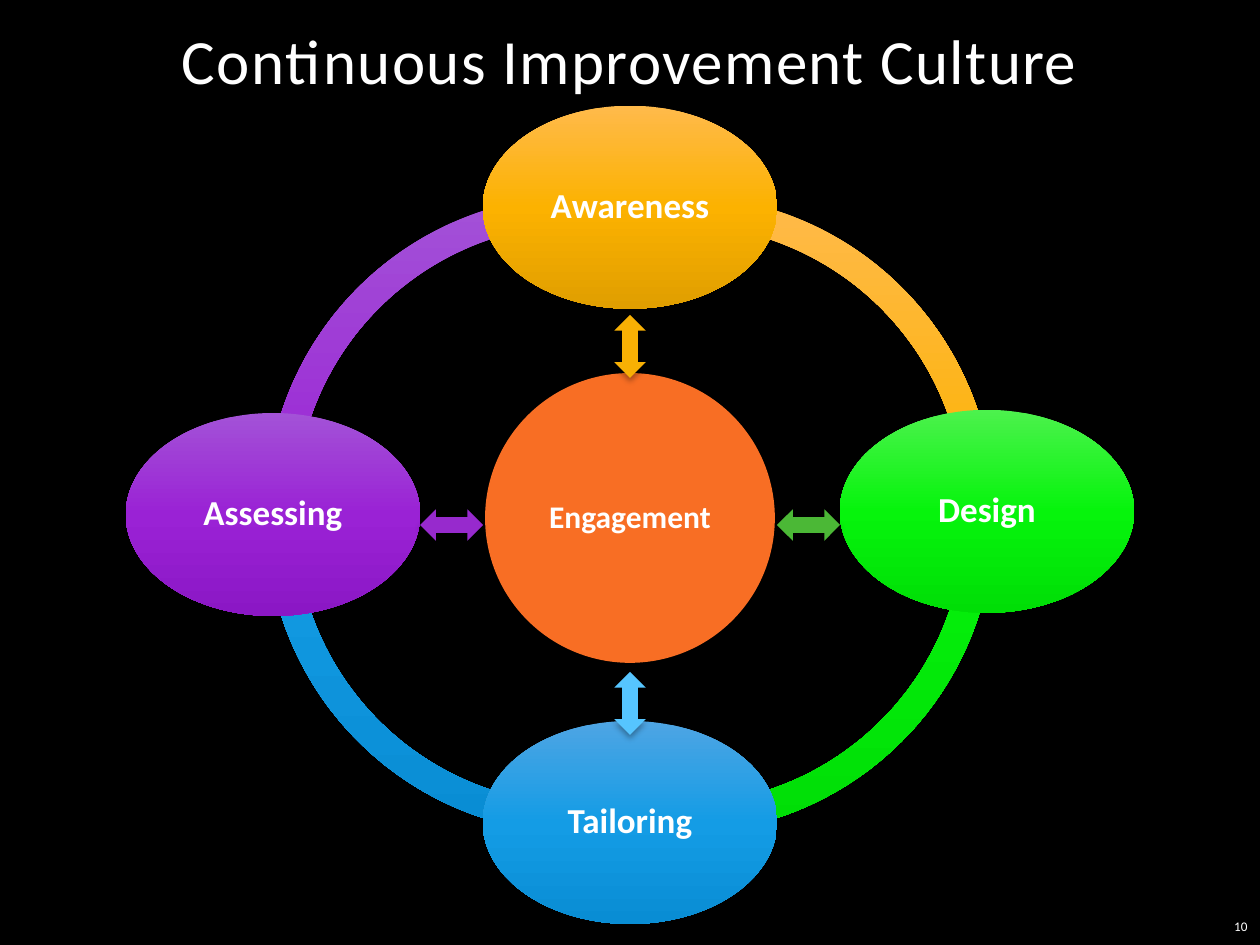
"""Build the Continuous Improvement Culture cycle slide."""
from copy import deepcopy
from dataclasses import dataclass

from lxml.etree import SubElement
from pptx import Presentation
from pptx.dml.color import RGBColor
from pptx.enum.shapes import MSO_SHAPE
from pptx.enum.text import MSO_ANCHOR, MSO_AUTO_SIZE, PP_ALIGN
from pptx.oxml.ns import qn
from pptx.util import Pt

WHITE = "FFFFFF"
PURPLE = ("A352D7", "9A22D5", "8B17C5")
BLUE = ("4EA5E4", "149CE5", "098DD4")
GREEN = ("4CF24D", "06F40C", "00DE06")
ORANGE = ("FFBA4B", "FCB200", "E09E00")
MIDDLE_X = 360
ARC_SIZE, ARC_THICKNESS = 360, 4.64 / 100
STAGE_WIDTH, STAGE_HEIGHT = 168.2, 116
HUB_SIZE, HUB_Y = 165.6, 296
ARROW_WIDTH, ARROW_LENGTH, ARROW_REACH, ARROW_Y = 18, 36, 102, 300


@dataclass(frozen=True)
class Arc:
    """A quarter of the ring, by centre and by start and end degrees."""
    x: float
    y: float
    start: float
    end: float
    shades: tuple[str, str, str]


@dataclass(frozen=True)
class Stage:
    """A named stage of the cycle, by centre."""
    name: str
    x: float
    y: float
    shades: tuple[str, str, str]


@dataclass(frozen=True)
class Arrow:
    """A two-way arrow, by direction from the hub."""
    across: int
    down: int
    color: str


ARCS = (
    Arc(332, 291.6, 179.26, 279.23, PURPLE),
    Arc(332, 296.4, 80.77, 180.74, BLUE),
    Arc(388, 296.4, 358.61, 99.3, GREEN),
    Arc(388, 291.6, 260.72, 0.11, ORANGE),
)
STAGES = (
    Stage("Awareness", MIDDLE_X, 118.4, ORANGE),
    Stage("Design", 564, 292.2, GREEN),
    Stage("Tailoring", MIDDLE_X, 470, BLUE),
    Stage("Assessing", 156, 294, PURPLE),
)
ARROWS = (
    Arrow(0, 1, "56C5FF"),
    Arrow(0, -1, "F8B004"),
    Arrow(1, 0, "4BB836"),
    Arrow(-1, 0, "972ACD"),
)


def rgb(color: str) -> RGBColor:
    """Turn a hex string into a colour."""
    return RGBColor.from_string(color)


def add_centred(slide, preset, x: float, y: float, width: float, height: float):
    """Add a plain preset shape around a centre."""
    shape = slide.shapes.add_shape(
        preset, Pt(x - width / 2), Pt(y - height / 2), Pt(width), Pt(height))
    shape.shadow.inherit = False
    shape.line.fill.background()
    return shape


def fill_solid(shape, color: str) -> None:
    """Fill a shape with one colour."""
    shape.fill.solid()
    shape.fill.fore_color.rgb = rgb(color)


def fill_shades(shape, shades: tuple[str, str, str]) -> None:
    """Fill a shape with an even gradient from top to bottom."""
    shape.fill.gradient()
    shape.fill.gradient_angle = 270
    stop_list = shape._element.spPr.find(qn("a:gradFill")).find(qn("a:gsLst"))
    stop_list.append(deepcopy(stop_list[0]))
    for index, (stop, shade) in enumerate(zip(shape.fill.gradient_stops, shades)):
        stop.position = index / 2
        stop.color.rgb = rgb(shade)


def write(frame, text: str, size: float, align, anchor, bold: bool = False):
    """Write one white paragraph and return it."""
    frame.word_wrap = True
    frame.auto_size = MSO_AUTO_SIZE.NONE
    frame.vertical_anchor = anchor
    paragraph = frame.paragraphs[0]
    paragraph.text = text
    paragraph.alignment = align
    font = paragraph.font
    font.name, font.size, font.bold = "Calibri", Pt(size), bold
    font.color.rgb = rgb(WHITE)
    return paragraph


def label(shape, text: str, size: float) -> None:
    """Write a bold centred label inside a shape."""
    frame = shape.text_frame
    frame.margin_left = frame.margin_right = Pt(2)
    frame.margin_top = frame.margin_bottom = Pt(2)
    paragraph = write(frame, text, size, PP_ALIGN.CENTER, MSO_ANCHOR.MIDDLE, True)
    paragraph.line_spacing = 0.9


def add_title(slide, text: str) -> None:
    """Place and format the title."""
    title = slide.shapes.title
    title.left, title.top, title.width, title.height = Pt(49.7), Pt(-0.7), Pt(620.6), Pt(60.5)
    paragraph = write(title.text_frame, text, 36, PP_ALIGN.CENTER, MSO_ANCHOR.BOTTOM)
    paragraph.line_spacing = 0.9
    paragraph.runs[0]._r.get_or_add_rPr().set("spc", "80")


def add_page_number(slide, number: str) -> None:
    """Write the page number in the lower right corner."""
    box = slide.shapes.add_textbox(Pt(670.3), Pt(518.4), Pt(49.7), Pt(21.6))
    write(box.text_frame, number, 7.5, PP_ALIGN.RIGHT, MSO_ANCHOR.MIDDLE)


def add_arc(slide, arc: Arc) -> None:
    """Draw one quarter of the ring."""
    shape = add_centred(slide, MSO_SHAPE.BLOCK_ARC, arc.x, arc.y, ARC_SIZE, ARC_SIZE)
    shape.adjustments[0] = arc.start * 0.6
    shape.adjustments[1] = arc.end * 0.6
    shape.adjustments[2] = ARC_THICKNESS
    fill_shades(shape, arc.shades)


def add_hub(slide) -> None:
    """Draw the circle in the middle of the ring."""
    hub = add_centred(slide, MSO_SHAPE.OVAL, MIDDLE_X, HUB_Y, HUB_SIZE, HUB_SIZE)
    fill_solid(hub, "F86E24")
    label(hub, "Engagement", 18)


def add_stage(slide, stage: Stage) -> None:
    """Draw one stage of the cycle."""
    oval = add_centred(slide, MSO_SHAPE.OVAL, stage.x, stage.y, STAGE_WIDTH, STAGE_HEIGHT)
    fill_shades(oval, stage.shades)
    label(oval, stage.name, 20)


def add_arrow(slide, arrow: Arrow) -> None:
    """Draw a two-way arrow with a soft shadow below it."""
    shape = add_centred(
        slide, MSO_SHAPE.UP_DOWN_ARROW, MIDDLE_X + arrow.across * ARROW_REACH,
        ARROW_Y + arrow.down * ARROW_REACH, ARROW_WIDTH, ARROW_LENGTH)
    shape.rotation = 90 if arrow.across else 0
    fill_solid(shape, arrow.color)
    effects = shape._element.spPr.find(qn("a:effectLst"))
    shadow = SubElement(effects, qn("a:outerShdw"), blurRad=str(Pt(3.5)),
                        dist=str(Pt(2.2)), dir="5400000", rotWithShape="0")
    tone = SubElement(shadow, qn("a:srgbClr"), val="000000")
    SubElement(tone, qn("a:alpha"), val="32000")


def main() -> None:
    """Build and save the slide."""
    deck = Presentation()
    deck.slide_width, deck.slide_height = Pt(720), Pt(540)
    slide = deck.slides.add_slide(deck.slide_layouts[5])
    slide.background.fill.solid()
    slide.background.fill.fore_color.rgb = rgb("000000")
    add_title(slide, "Continuous Improvement Culture")
    add_page_number(slide, "10")
    for arc in ARCS:
        add_arc(slide, arc)
    add_hub(slide)
    for stage in STAGES:
        add_stage(slide, stage)
    for arrow in ARROWS:
        add_arrow(slide, arrow)
    deck.save("out.pptx")


if __name__ == "__main__":
    main()
